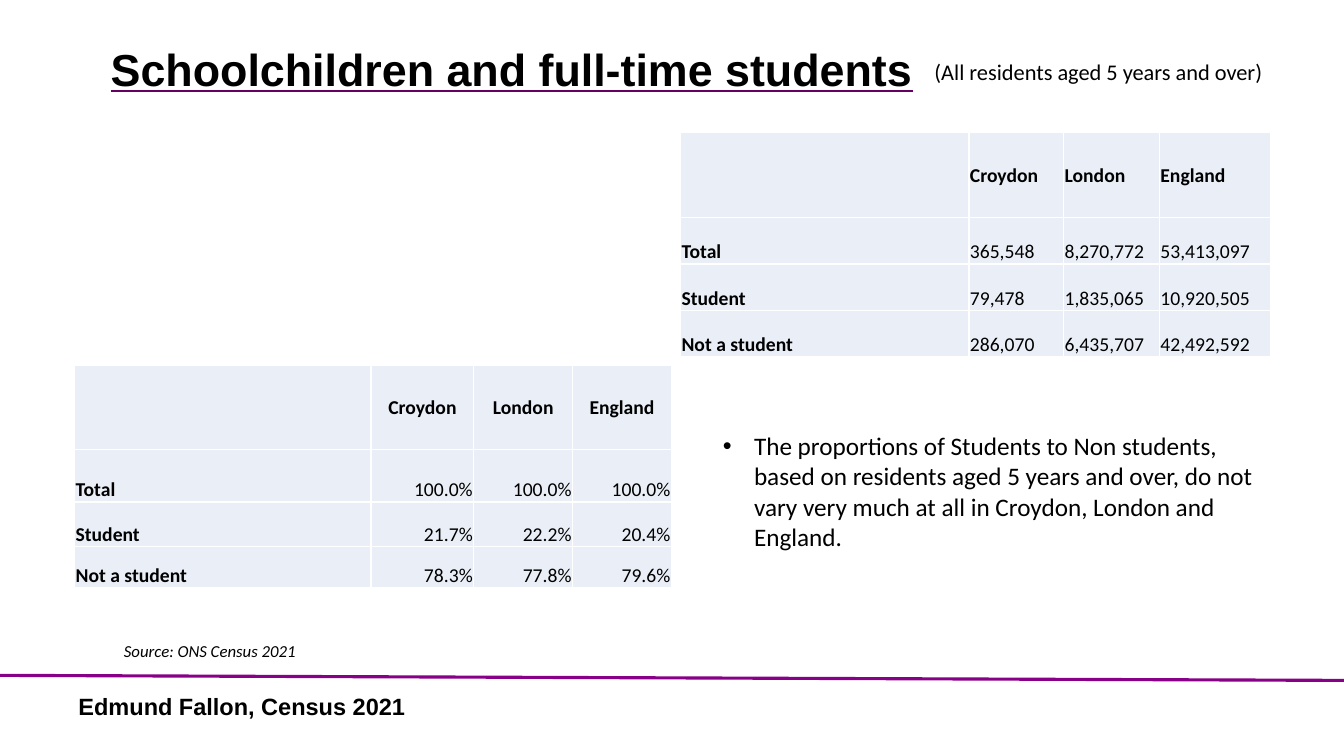
from lxml import etree
from pptx import Presentation
from pptx.dml.color import RGBColor
from pptx.enum import shapes, text
from pptx.oxml import ns
from pptx.util import Inches, Pt

THEME = {
    "ink": "000000", "rule": "880088", "under": "660066",
    "cell": "EAEFF7", "edge": "FFFFFF",
    "head": "Arial", "body": "Calibri",
    "title": 32, "foot": 16.8, "note": 16, "point": 18, "table": 14, "source": 12,
}
L, C, R = text.PP_ALIGN.LEFT, text.PP_ALIGN.CENTER, text.PP_ALIGN.RIGHT
MID, LOW, TOP = (text.MSO_ANCHOR.MIDDLE, text.MSO_ANCHOR.BOTTOM, text.MSO_ANCHOR.TOP)

TITLE = "Schoolchildren and full-time students"
NOTE = "(All residents aged 5 years and over)"
POINT = ("The proportions of Students to Non students, based on residents aged "
         "5 years and over, do not vary very much at all in Croydon, London and England.")
SOURCE = "Source: ONS Census 2021"
FOOT = "Edmund Fallon, Census 2021"
HEAD = ("", "Croydon", "London", "England")
COUNTS = [
    HEAD,
    ("Total", "365,548", "8,270,772", "53,413,097"),
    ("Student", "79,478", "1,835,065", "10,920,505"),
    ("Not a student", "286,070", "6,435,707", "42,492,592"),
]
SHARES = [
    HEAD,
    ("Total", "100.0%", "100.0%", "100.0%"),
    ("Student", "21.7%", "22.2%", "20.4%"),
    ("Not a student", "78.3%", "77.8%", "79.6%"),
]
# left, top, column widths, row heights, rows, heading and value alignment
TABLES = [
    (6.75, 1.31, (2.86, 0.94, 0.95, 1.1), (0.85, 0.46, 0.46, 0.46), COUNTS, L, L),
    (0.74, 3.63, (2.94, 1.02, 0.98, 0.98), (0.83, 0.52, 0.44, 0.41), SHARES, C, R),
]


def color(name):
    return RGBColor.from_string(THEME[name])


def sub(parent, tag, **attrs):
    return etree.SubElement(parent, ns.qn("a:" + tag), attrs)


def paint(parent, name):
    sub(sub(parent, "solidFill"), "srgbClr", val=THEME[name])


def style(para, size, face="body", bold=False, italic=False):
    font = para.font
    font.name, font.size = THEME[face], Pt(THEME[size])
    font.bold, font.italic = bold, italic
    font.color.rgb = color("ink")


def label(slide, box, words, size, anchor=TOP, bullet=False, **look):
    shape = slide.shapes.add_textbox(*map(Inches, box))
    frame = shape.text_frame
    frame.word_wrap, frame.vertical_anchor = True, anchor
    para = frame.paragraphs[0]
    para.text = words
    if bullet:
        props = para._p.get_or_add_pPr()
        props.set("marL", str(Inches(0.31)))
        props.set("indent", str(-Inches(0.31)))
        sub(props, "buFont", typeface="Arial")
        sub(props, "buChar", char="•")
    style(para, size, **look)
    return para


def border(cell):
    props = cell._tc.get_or_add_tcPr()
    for side in ("lnL", "lnR", "lnT", "lnB"):
        paint(sub(props, side, w=str(Pt(1))), "edge")


def grid(slide, left, top, cols, rows, data, heading, value):
    box = map(Inches, (left, top, sum(cols), sum(rows)))
    table = slide.shapes.add_table(len(rows), len(cols), *box).table
    table.first_row = table.horz_banding = False
    for col, width in zip(table.columns, cols):
        col.width = Inches(width)
    for r, (row, height) in enumerate(zip(data, rows)):
        table.rows[r].height = Inches(height)
        for c, words in enumerate(row):
            cell = table.cell(r, c)
            border(cell)
            cell.fill.solid()
            cell.fill.fore_color.rgb = color("cell")
            cell.margin_left = cell.margin_right = cell.margin_top = Inches(0.01)
            cell.margin_bottom = 0
            cell.vertical_anchor = LOW if r else MID
            para = cell.text_frame.paragraphs[0]
            para.text = words
            para.alignment = L if c == 0 else value if r else heading
            style(para, "table", bold=r == 0 or c == 0)


def main():
    deck = Presentation()
    deck.slide_width, deck.slide_height = Inches(13.33), Inches(7.5)
    slide = deck.slides.add_slide(deck.slide_layouts[6])

    rule = slide.shapes.add_connector(
        shapes.MSO_CONNECTOR.STRAIGHT, *map(Inches, (0, 6.7, 13.33, 6.75)))
    rule.line.color.rgb, rule.line.width = color("rule"), Pt(2.25)
    sub(rule._element.spPr, "effectLst")

    foot = label(slide, (0.68, 6.89, 3.87, 0.47), FOOT, "foot", face="head", bold=True)
    foot.line_spacing = 0.7
    title = label(slide, (1, 0.25, 11.5, 0.92), TITLE, "title", MID, face="head", bold=True)
    title.line_spacing = 0.9
    run = title.runs[0]
    run.font.underline = True
    paint(sub(run._r.get_or_add_rPr(), "uFill"), "under")

    label(slide, (1.13, 6.31, 2.18, 0.3), SOURCE, "source", italic=True)
    for spot in TABLES:
        grid(slide, *spot)
    label(slide, (9.17, 0.53, 3.53, 0.37), NOTE, "note")
    label(slide, (7.07, 4.22, 5.52, 1.62), POINT, "point", bullet=True)
    deck.save("out.pptx")


if __name__ == "__main__":
    main()
